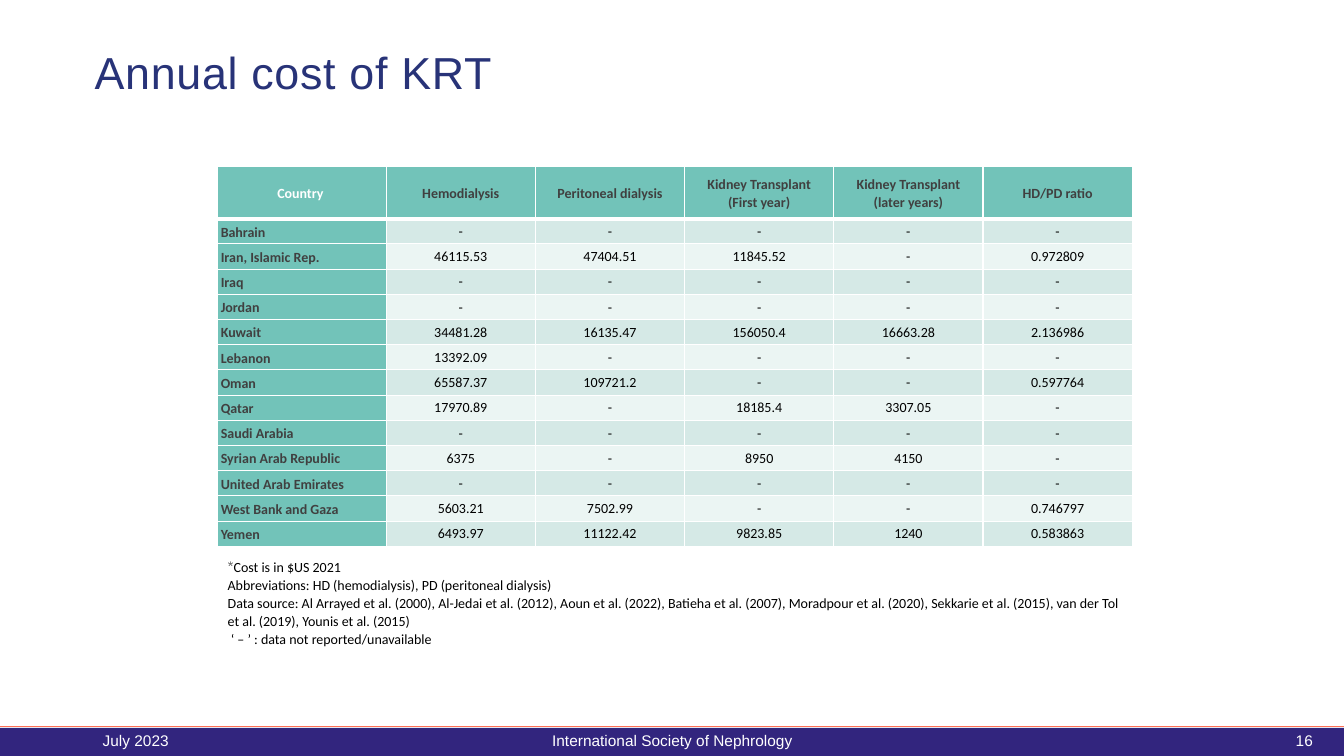
import pptx
import pptx.util
import pptx.dml.color
import pptx.enum.shapes
import pptx.enum.text
import pptx.oxml
import pptx.oxml.ns
from dataclasses import dataclass

Inches, Pt = pptx.util.Inches, pptx.util.Pt
RGB = pptx.dml.color.RGBColor.from_string
ALIGN = pptx.enum.text.PP_ALIGN
MIDDLE = pptx.enum.text.MSO_ANCHOR.MIDDLE


@dataclass
class Theme:
    navy: str = "283378"
    footer: str = "32257E"
    coral: str = "FE7055"
    teal: str = "72C3B9"
    bands: tuple = ("D5E9E6", "EBF5F3")
    label: str = "404040"
    black: str = "000000"
    white: str = "FFFFFF"
    title_size: float = 32
    body_size: float = 10
    footer_size: float = 11
    heading: str = "Arial"
    body: str = "Calibri"
    symbol: str = "Cabin"


theme = Theme()


def format_text(tf, font, size, color, align=ALIGN.LEFT, bold=False, spacing=None):
    for p in tf.paragraphs:
        p.alignment = align
        if spacing:
            p.line_spacing = spacing
        for r in p.runs:
            r.font.name, r.font.size, r.font.bold = font, Pt(size), bold
            r.font.color.rgb = RGB(color)


def add_text(text, left, top, width, height, anchor=MIDDLE):
    tf = s.shapes.add_textbox(Inches(left), Inches(top), Inches(width), Inches(height)).text_frame
    tf.word_wrap = True
    tf.vertical_anchor = anchor
    tf.text = text
    return tf


prs = pptx.Presentation()
prs.slide_width, prs.slide_height = Inches(13.33), Inches(7.5)
s = prs.slides.add_slide(prs.slide_layouts[6])

# Footer band and rule
band_top = Inches(7.22)
bar = s.shapes.add_shape(pptx.enum.shapes.MSO_SHAPE.RECTANGLE, 0, band_top,
                         prs.slide_width, prs.slide_height - band_top)
bar.shadow.inherit = False
bar.fill.solid()
bar.fill.fore_color.rgb = RGB(theme.footer)
bar.line.fill.background()

rule_y = Inches(7.21)
rule = s.shapes.add_connector(pptx.enum.shapes.MSO_CONNECTOR.STRAIGHT,
                              0, rule_y, prs.slide_width, rule_y)
rule.line.color.rgb = RGB(theme.coral)
rule.line.width = Pt(0.75)
rule._element.spPr.append(pptx.oxml.parse_xml(
    f"<a:effectLst {pptx.oxml.ns.nsdecls('a')}/>"))

# Title
tf = add_text("Annual cost of KRT", 0.84, 0.39, 9.26, 0.71)
format_text(tf, theme.heading, theme.title_size, theme.navy, spacing=0.9)
tf.paragraphs[0].runs[0].font._element.set("spc", "50")

# Cost table
rows = [
    ["Country ", "Hemodialysis", "Peritoneal dialysis", "Kidney Transplant\n(First year)",
     "Kidney Transplant\n(later years)", "HD/PD ratio"],
    ["Bahrain", "-", "-", "-", "-", "-"],
    ["Iran, Islamic Rep.", "46115.53", "47404.51", "11845.52", "-", "0.972809"],
    ["Iraq", "-", "-", "-", "-", "-"],
    ["Jordan", "-", "-", "-", "-", "-"],
    ["Kuwait", "34481.28", "16135.47", "156050.4", "16663.28", "2.136986"],
    ["Lebanon", "13392.09", "-", "-", "-", "-"],
    ["Oman", "65587.37", "109721.2", "-", "-", "0.597764"],
    ["Qatar", "17970.89", "-", "18185.4", "3307.05", "-"],
    ["Saudi Arabia", "-", "-", "-", "-", "-"],
    ["Syrian Arab Republic", "6375", "-", "8950", "4150", "-"],
    ["United Arab Emirates", "-", "-", "-", "-", "-"],
    ["West Bank and Gaza", "5603.21", "7502.99", "-", "-", "0.746797"],
    ["Yemen", "6493.97", "11122.42", "9823.85", "1240", "0.583863"],
]
table = s.shapes.add_table(len(rows), len(rows[0]), Inches(2.16), Inches(1.65),
                           Inches(9.08), Inches(3.77)).table
table.horz_banding = table.first_row = False
for j, column in enumerate(table.columns):
    column.width = Inches(1.48 if j else 1.67)
for i, row in enumerate(table.rows):
    row.height = Inches(0.25 if i else 0.52)

for i, values in enumerate(rows):
    for j, value in enumerate(values):
        cell = table.cell(i, j)
        cell.text = value
        cell.vertical_anchor = MIDDLE
        is_label = i == 0 or j == 0
        cell.margin_left = cell.margin_right = Inches(0.03 if is_label else 0.01)
        cell.margin_top, cell.margin_bottom = Inches(0.01), 0

        color = theme.label if is_label else theme.black
        if i == j == 0:
            color = theme.white
        format_text(cell.text_frame, theme.body, theme.body_size, color,
                    ALIGN.LEFT if i and j == 0 else ALIGN.CENTER,
                    is_label, 1.06 if is_label else None)

        # Borders come before the fill in the cell properties
        widths = {"L": 1, "R": 1, "T": 3 if i == 1 else 1, "B": 1 if i else 3}
        for side, width in widths.items():
            cell._tc.get_or_add_tcPr().append(pptx.oxml.parse_xml(
                f"<a:ln{side} {pptx.oxml.ns.nsdecls('a')} w='{Pt(width)}'><a:solidFill>"
                f"<a:srgbClr val='{theme.white}'/></a:solidFill></a:ln{side}>"))
        cell.fill.solid()
        cell.fill.fore_color.rgb = RGB(theme.teal if is_label else theme.bands[(i - 1) % 2])

# Notes under the table
tf = add_text("\n".join([
    "*",
    "Abbreviations: HD (hemodialysis), PD (peritoneal dialysis)",
    "Data source: Al Arrayed et al. (2000), Al-Jedai et al. (2012), Aoun et al. (2022), "
    "Batieha et al. (2007), Moradpour et al. (2020), Sekkarie et al. (2015), "
    "van der Tol et al. (2019), Younis et al. (2015)",
    " ‘ – ’ : data not reported/unavailable",
]), 2.16, 5.48, 9.15, 1, pptx.enum.text.MSO_ANCHOR.TOP)
tf.paragraphs[0].add_run().text = "Cost is in $US 2021"
format_text(tf, theme.body, theme.body_size, theme.black, spacing=1.07)
tf.paragraphs[0].runs[0].font.name = theme.symbol

# Footer text
for text, left, width, align in [
    ("July 2023", 0.92, 3, ALIGN.LEFT),
    ("International Society of Nephrology", 4.42, 4.5, ALIGN.CENTER),
    ("16", 9.42, 3.7, ALIGN.RIGHT),
]:
    tf = add_text(text, left, 7.15, width, 0.4)
    format_text(tf, theme.heading, theme.footer_size, theme.white, align)

prs.save("out.pptx")
